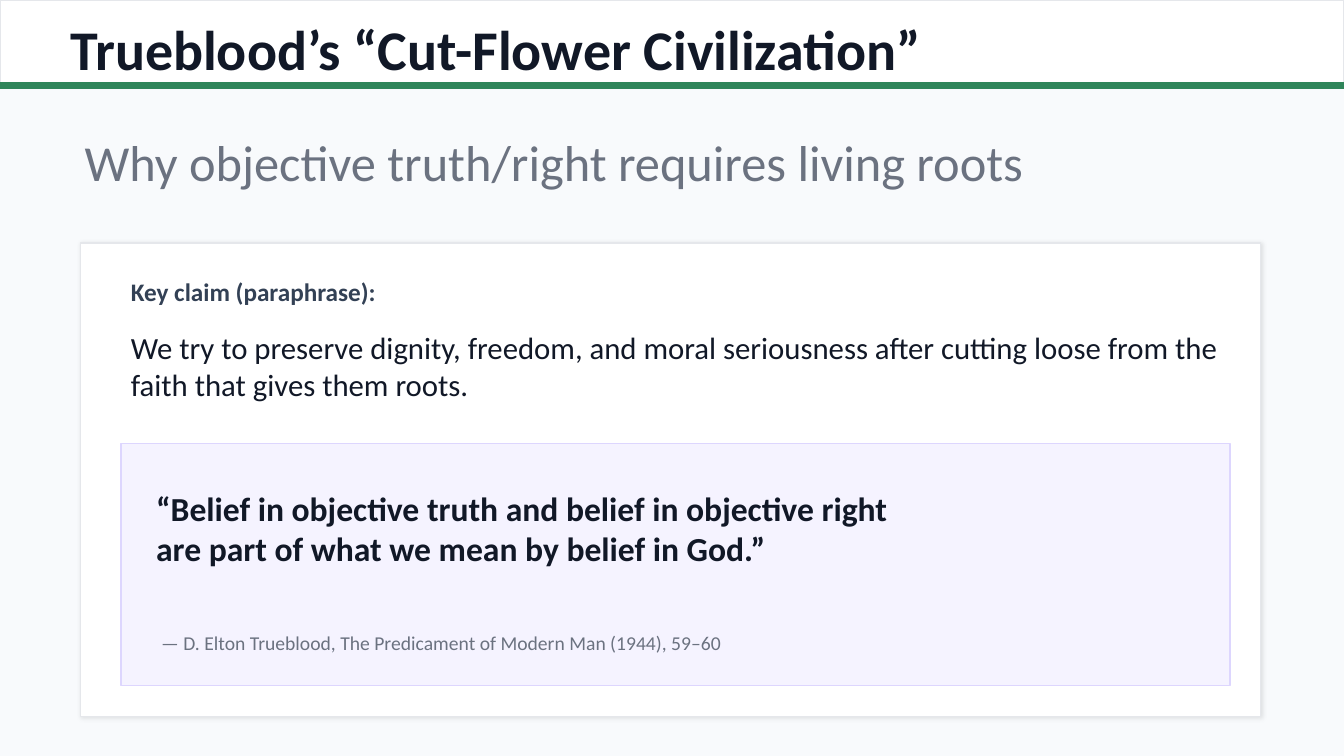
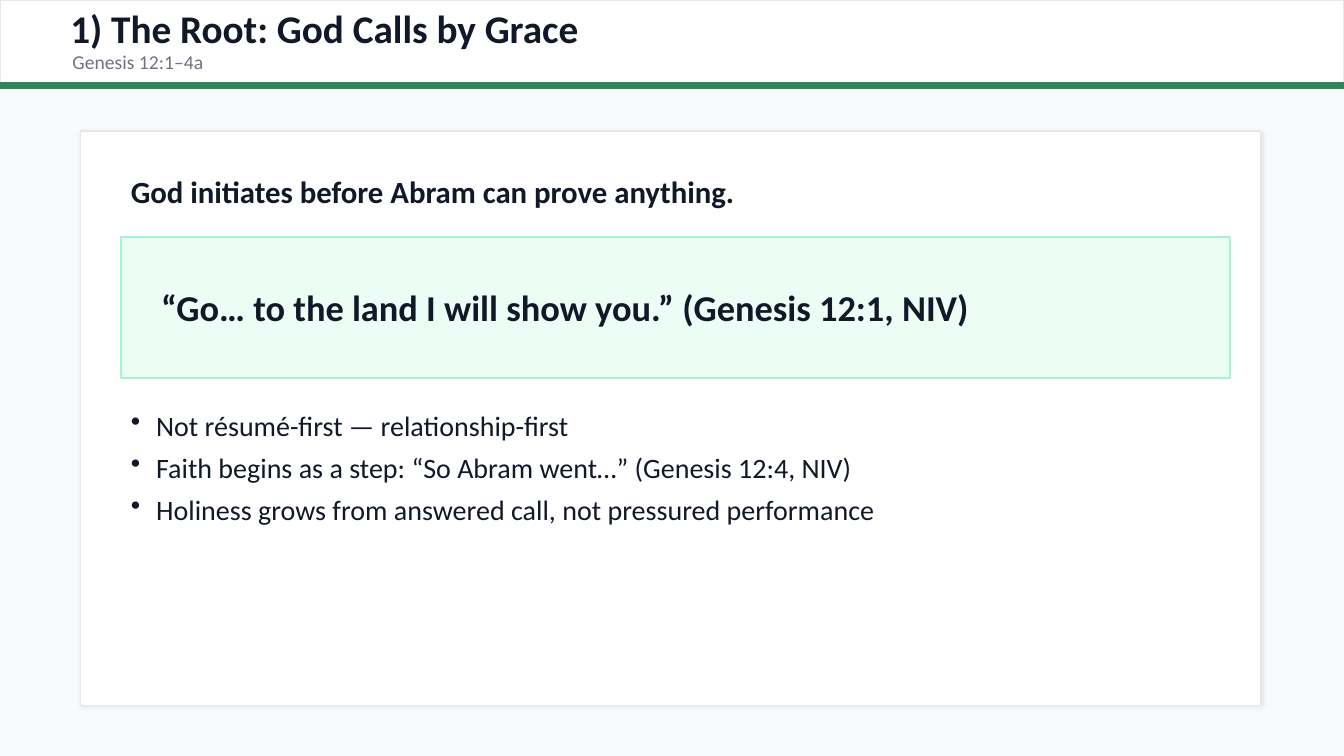
from dataclasses import dataclass

from lxml.etree import SubElement
from pptx import Presentation
from pptx.dml.color import RGBColor
from pptx.enum.shapes import MSO_SHAPE
from pptx.enum.text import MSO_ANCHOR
from pptx.oxml.ns import qn
from pptx.util import Emu, Pt

PX = 9144  # EMU per px, 100 px to the inch
WIDTH, HEIGHT = 1333, 750
FONT = "Calibri"
COLORS = {
    "page": "F8FAFC", "white": "FFFFFF", "border": "E5E7EB", "accent": "2F855A",
    "ink": "111827", "muted": "6B7280", "slate": "334155", "shadow": "000000",
    "violet": "F5F3FF", "violet_edge": "DDD6FE",
    "mint": "ECFDF5", "mint_edge": "A7F3D0",
}


@dataclass(frozen=True)
class Box:
    x: int
    y: int
    w: int
    h: int

    def emu(self) -> list[Emu]:
        return [Emu(v * PX) for v in (self.x, self.y, self.w, self.h)]


@dataclass(frozen=True)
class Panel:
    box: Box
    fill: str
    edge: str
    shadow: bool = False


@dataclass(frozen=True)
class Label:
    box: Box
    lines: tuple[str, ...]
    size: int
    color: str = "ink"
    bold: bool = False
    bullets: bool = False


def rgb(name: str) -> RGBColor:
    return RGBColor.from_string(COLORS[name])


def add_shadow(sp) -> None:
    effects = sp._element.spPr.find(qn("a:effectLst"))
    shadow = SubElement(effects, qn("a:outerShdw"), blurRad=str(Pt(3)),
                        dist=str(Pt(1)), dir=str(45 * 60000), rotWithShape="0")
    color = SubElement(shadow, qn("a:srgbClr"), val=COLORS["shadow"])
    SubElement(color, qn("a:alpha"), val="10000")


def add_bullet(p) -> None:
    pPr = p._p.get_or_add_pPr()
    indent = 25 * PX
    pPr.set("marL", str(indent))
    pPr.set("indent", str(-indent))
    p.space_after = Pt(6)
    SubElement(pPr, qn("a:buChar"), char="•")


def draw_panel(s, panel: Panel) -> None:
    sp = s.shapes.add_shape(MSO_SHAPE.RECTANGLE, *panel.box.emu())
    sp.shadow.inherit = False
    sp.fill.solid()
    sp.fill.fore_color.rgb = rgb(panel.fill)
    sp.line.color.rgb = rgb(panel.edge)
    sp.line.width = Pt(1)
    if panel.shadow:
        add_shadow(sp)


def draw_label(s, label: Label) -> None:
    tf = s.shapes.add_textbox(*label.box.emu()).text_frame
    tf.word_wrap = True
    tf.vertical_anchor = MSO_ANCHOR.TOP if label.bullets else MSO_ANCHOR.MIDDLE
    font = {"name": FONT, "size": Pt(label.size), "bold": label.bold}
    for i, text in enumerate(label.lines):
        p = tf.add_paragraph() if i else tf.paragraphs[0]
        if label.bullets:
            add_bullet(p)
        r = p.add_run()
        r.text = text
        for key, value in font.items():
            setattr(r.font, key, value)
        r.font.color.rgb = rgb(label.color)


def card(y: int, h: int) -> Panel:
    return Panel(Box(80, y, 1170, h), "white", "border", shadow=True)


def body_box(y: int, h: int) -> Box:
    return Box(120, y, 1100, h)


def quote_box(y: int, h: int, x: int = 150) -> Box:
    return Box(x, y, 1040, h)


# Header band and accent rule on every slide
HEADER = (
    Panel(Box(0, 0, WIDTH, 82), "white", "border"),
    Panel(Box(0, 82, WIDTH, 6), "accent", "accent"),
)


def title(text: str, h: int, size: int) -> Label:
    return Label(Box(60, 14, 1213, h), (text,), size, bold=True)


def subtitle(text: str, x: int, y: int, size: int) -> Label:
    return Label(Box(x, y, 1209, 30), (text,), size, "muted")


SLIDES = (
    # Cut-flower civilization
    (
        title("Trueblood’s “Cut-Flower Civilization”", 68, 40),
        subtitle("Why objective truth/right requires living roots", 74, 145, 36),
        card(241, 470),
        Label(body_box(274, 30), ("Key claim (paraphrase):",), 18, "slate", True),
        Label(body_box(318, 90), (
            "We try to preserve dignity, freedom, and moral seriousness after "
            "cutting loose from the faith that gives them roots.",), 22),
        Panel(body_box(440, 240), "violet", "violet_edge"),
        Label(quote_box(464, 120, x=145), (
            "“Belief in objective truth and belief in objective right",
            "are part of what we mean by belief in God.”"), 24, bold=True),
        Label(quote_box(613, 50), (
            "— D. Elton Trueblood, The Predicament of Modern Man (1944), 59–60",),
            14, "muted"),
    ),
    # The root
    (
        title("1) The Root: God Calls by Grace", 28, 28),
        subtitle("Genesis 12:1–4a", 62, 46, 14),
        card(130, 570),
        Label(body_box(165, 50),
              ("God initiates before Abram can prove anything.",), 22, bold=True),
        Panel(body_box(235, 140), "mint", "mint_edge"),
        Label(quote_box(265, 80), (
            "“Go… to the land I will show you.” (Genesis 12:1, NIV)",), 26, bold=True),
        Label(body_box(400, 270), (
            "Not résumé-first — relationship-first",
            "Faith begins as a step: “So Abram went…” (Genesis 12:4, NIV)",
            "Holiness grows from answered call, not pressured performance",
        ), 20, bullets=True),
    ),
)


def main() -> None:
    prs = Presentation()
    prs.slide_width, prs.slide_height = Emu(WIDTH * PX), Emu(HEIGHT * PX)
    for parts in SLIDES:
        s = prs.slides.add_slide(prs.slide_layouts[6])
        s.background.fill.solid()
        s.background.fill.fore_color.rgb = rgb("page")
        for part in HEADER + parts:
            if isinstance(part, Panel):
                draw_panel(s, part)
            else:
                draw_label(s, part)
    prs.save("out.pptx")


if __name__ == "__main__":
    main()
